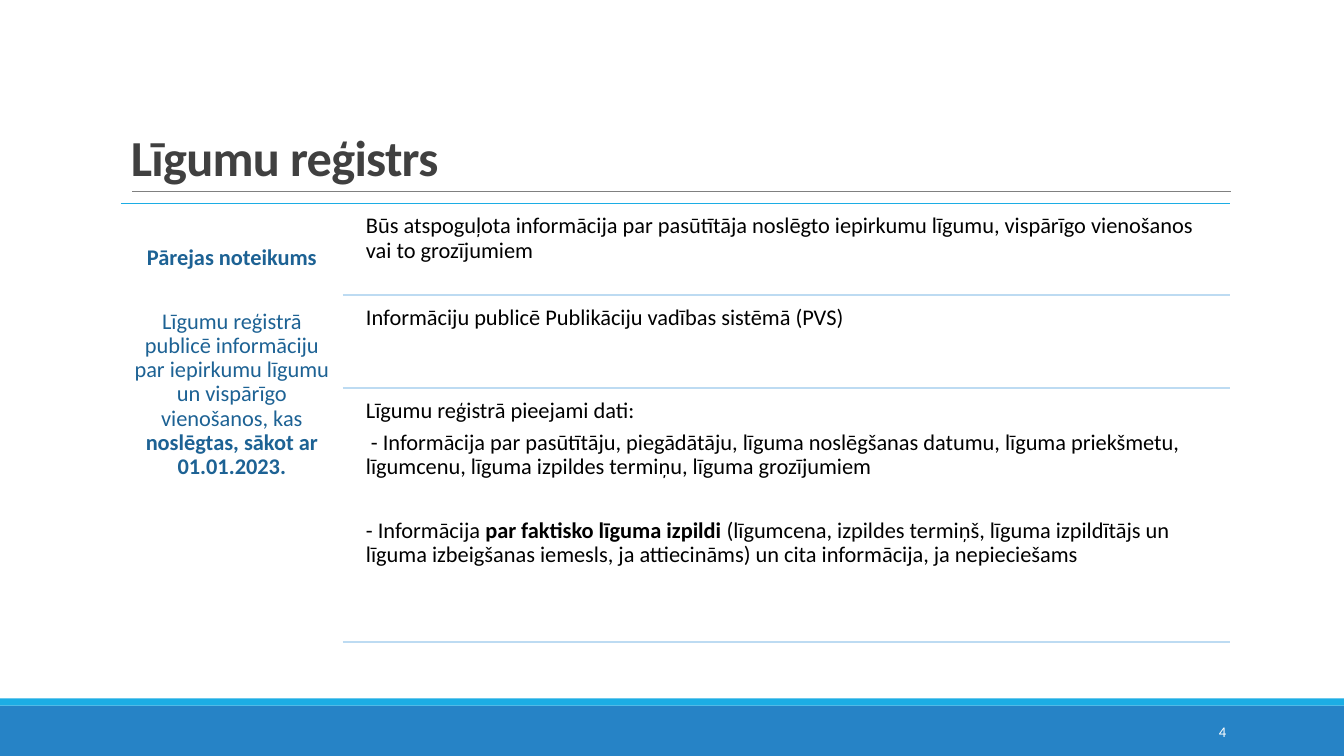
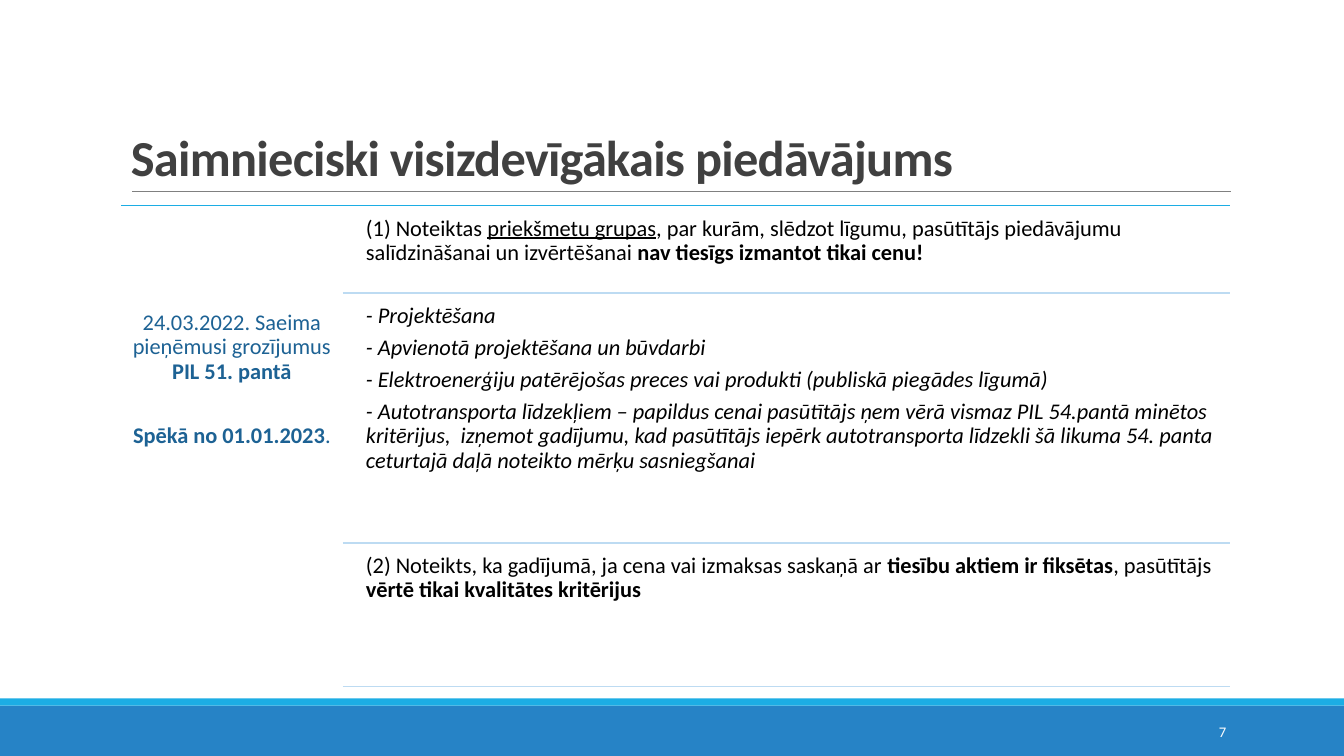
from dataclasses import dataclass

from lxml import etree
from pptx import Presentation
from pptx.dml.color import RGBColor
from pptx.enum.shapes import MSO_CONNECTOR, MSO_SHAPE
from pptx.enum.text import MSO_ANCHOR, PP_ALIGN
from pptx.oxml.ns import qn
from pptx.util import Inches, Pt

STRAIGHT = MSO_CONNECTOR.STRAIGHT
RECT = MSO_SHAPE.RECTANGLE
LEFT, CENTER, RIGHT = PP_ALIGN.LEFT, PP_ALIGN.CENTER, PP_ALIGN.RIGHT
TOP, MIDDLE, BOTTOM = MSO_ANCHOR.TOP, MSO_ANCHOR.MIDDLE, MSO_ANCHOR.BOTTOM

BLUE = RGBColor(0x26, 0x83, 0xC6)
CYAN = RGBColor(0x1C, 0xAD, 0xE4)
PALE_BLUE = RGBColor(0xBD, 0xDB, 0xF2)
DARK_BLUE = RGBColor(0x1D, 0x62, 0x94)
GREY = RGBColor(0x80, 0x80, 0x80)
DARK_GREY = RGBColor(0x40, 0x40, 0x40)
BLACK = RGBColor(0x00, 0x00, 0x00)
WHITE = RGBColor(0xFF, 0xFF, 0xFF)

FONT = "Calibri"
SLIDE_W, SLIDE_H = 13.33, 7.5
CONTENT_L, CONTENT_R = 1.2, 12.2
SIDE_W = 2.2
ROW_L, ROW_W, ROW_GAP = 3.56, 8.63, 0.04
BLANK_LINE = 22.9


@dataclass(frozen=True)
class Run:
    text: str
    bold: bool = False
    italic: bool = False
    underline: bool = False


@dataclass(frozen=True)
class Para:
    runs: tuple[Run, ...]
    before: float = 0


@dataclass(frozen=True)
class Row:
    height: float
    paras: tuple[Para, ...]


@dataclass(frozen=True)
class Page:
    title: str
    number: int
    top: float
    side_top: float
    side: tuple[Para, ...]
    rows: tuple[Row, ...]


def plain(text: str) -> Para:
    return Para((Run(text),))


def italic(text: str) -> Para:
    return Para((Run(text, italic=True),))


PAGES = (
    Page(
        "Līgumu reģistrs", 4, 2.02, 2.37,
        (
            Para((Run("Pārejas noteikums", bold=True),)),
            Para((
                Run("Līgumu reģistrā publicē informāciju par iepirkumu līgumu "
                    "un vispārīgo vienošanos, kas "),
                Run("noslēgtas, sākot ar 01.01.2023.", bold=True),
            ), BLANK_LINE),
        ),
        (
            Row(0.87, (plain(
                "Būs atspoguļota informācija par pasūtītāja noslēgto iepirkumu "
                "līgumu, vispārīgo vienošanos vai to grozījumiem"),)),
            Row(0.88, (plain(
                "Informāciju publicē Publikāciju vadības sistēmā (PVS)"),)),
            Row(2.48, (
                plain("Līgumu reģistrā pieejami dati:"),
                plain(" - Informācija par pasūtītāju, piegādātāju, līguma "
                      "noslēgšanas datumu, līguma priekšmetu, līgumcenu, līguma "
                      "izpildes termiņu, līguma grozījumiem"),
                Para((
                    Run("- Informācija "),
                    Run("par faktisko līguma izpildi ", bold=True),
                    Run("(līgumcena, izpildes termiņš, līguma izpildītājs un "
                        "līguma izbeigšanas iemesls, ja attiecināms) un cita "
                        "informācija, ja nepieciešams"),
                ), BLANK_LINE),
            )),
        ),
    ),
    Page(
        "Saimnieciski visizdevīgākais piedāvājums", 7, 2.04, 3.02,
        (
            Para((
                Run("24.03.2022. Saeima pieņēmusi grozījumus "),
                Run("PIL 51. pantā", bold=True),
            )),
            Para((Run("Spēkā no 01.01.2023", bold=True), Run(".")), BLANK_LINE),
        ),
        (
            Row(0.83, (Para((
                Run("(1) Noteiktas "),
                Run("priekšmetu grupas", underline=True),
                Run(", par kurām, slēdzot līgumu, pasūtītājs piedāvājumu "
                    "salīdzināšanai un izvērtēšanai "),
                Run("nav tiesīgs izmantot tikai cenu!", bold=True),
            )),)),
            Row(2.44, (
                italic("- Projektēšana"),
                italic("- Apvienotā projektēšana un būvdarbi"),
                italic("- Elektroenerģiju patērējošas preces vai produkti "
                       "(publiskā piegādes līgumā)"),
                italic("- Autotransporta līdzekļiem – papildus cenai pasūtītājs "
                       "ņem vērā vismaz PIL 54.pantā minētos kritērijus, "
                       " izņemot gadījumu, kad pasūtītājs iepērk autotransporta "
                       "līdzekli šā likuma 54. panta ceturtajā daļā noteikto "
                       "mērķu sasniegšanai"),
            )),
            Row(1.38, (Para((
                Run("(2) Noteikts, ka gadījumā, ja cena vai izmaksas saskaņā ar "),
                Run("tiesību aktiem ir fiksētas", bold=True),
                Run(", pasūtītājs "),
                Run("vērtē tikai kvalitātes kritērijus", bold=True),
            )),)),
        ),
    ),
)


def add_band(s, top: float, height: float, color: RGBColor) -> None:
    sp = s.shapes.add_shape(RECT, 0, Inches(top), Inches(SLIDE_W), Inches(height))
    sp.shadow.inherit = False
    sp.fill.solid()
    sp.fill.fore_color.rgb = color
    sp.line.fill.background()


def add_rule(s, left: float, right: float, y: float, color: RGBColor,
             width: float = 1.25) -> None:
    cn = s.shapes.add_connector(STRAIGHT, Inches(left), Inches(y),
                                Inches(right), Inches(y))
    cn.line.color.rgb = color
    cn.line.width = Pt(width)
    etree.SubElement(cn._element.spPr, qn("a:effectLst"))


def add_box(s, left: float, top: float, width: float, height: float, anchor):
    tf = s.shapes.add_textbox(Inches(left), Inches(top), Inches(width),
                              Inches(height)).text_frame
    tf.word_wrap = True
    tf.vertical_anchor = anchor
    return tf


def style(r, size: float, color: RGBColor, bold: bool = False) -> None:
    r.font.name = FONT
    r.font.size = Pt(size)
    r.font.color.rgb = color
    r.font.bold = bold


def add_body(s, left: float, top: float, width: float, height: float,
             paras: tuple[Para, ...], color: RGBColor, align) -> None:
    tf = add_box(s, left, top, width, height, TOP)
    tf.margin_left = tf.margin_right = Inches(0.07)
    tf.margin_top = tf.margin_bottom = Inches(0.07)
    for i, para in enumerate(paras):
        p = tf.add_paragraph() if i else tf.paragraphs[0]
        p.alignment = align
        p.line_spacing = 0.9
        p.space_before = Pt(para.before)
        p.space_after = Pt(5.6)
        for run in para.runs:
            r = p.add_run()
            r.text = run.text
            style(r, 16, color, run.bold)
            r.font.italic = run.italic
            r.font.underline = run.underline


def add_frame(s, title: str, number: int) -> None:
    add_band(s, 7, 0.5, BLUE)
    add_band(s, 6.93, 0.07, CYAN)
    add_rule(s, 1.31, 12.21, 1.9, GREY, 0.5)

    p = add_box(s, CONTENT_L, 0.31, 11, 1.59, BOTTOM).paragraphs[0]
    p.text = title
    p.line_spacing = 0.85
    r = p.runs[0]
    style(r, 36, DARK_GREY, True)
    r._r.get_or_add_rPr().set("spc", "-50")

    p = add_box(s, 10.83, 7.06, 1.43, 0.4, MIDDLE).paragraphs[0]
    p.text = str(number)
    p.alignment = RIGHT
    style(p.runs[0], 10.5, WHITE)


def add_page(prs, page: Page) -> None:
    s = prs.slides.add_slide(prs.slide_layouts[6])
    add_frame(s, page.title, page.number)
    add_rule(s, CONTENT_L, CONTENT_R, page.top, CYAN)
    bottom = page.top + sum(row.height + ROW_GAP for row in page.rows)
    add_body(s, CONTENT_L, page.side_top, SIDE_W, bottom - page.side_top,
             page.side, DARK_BLUE, CENTER)
    y = page.top
    for row in page.rows:
        y += ROW_GAP
        add_body(s, ROW_L, y, ROW_W, row.height, row.paras, BLACK, LEFT)
        y += row.height
        add_rule(s, CONTENT_L + SIDE_W, CONTENT_R, y, PALE_BLUE)


def main() -> None:
    prs = Presentation()
    prs.slide_width, prs.slide_height = Inches(SLIDE_W), Inches(SLIDE_H)
    for page in PAGES:
        add_page(prs, page)
    prs.save("out.pptx")


if __name__ == "__main__":
    main()
